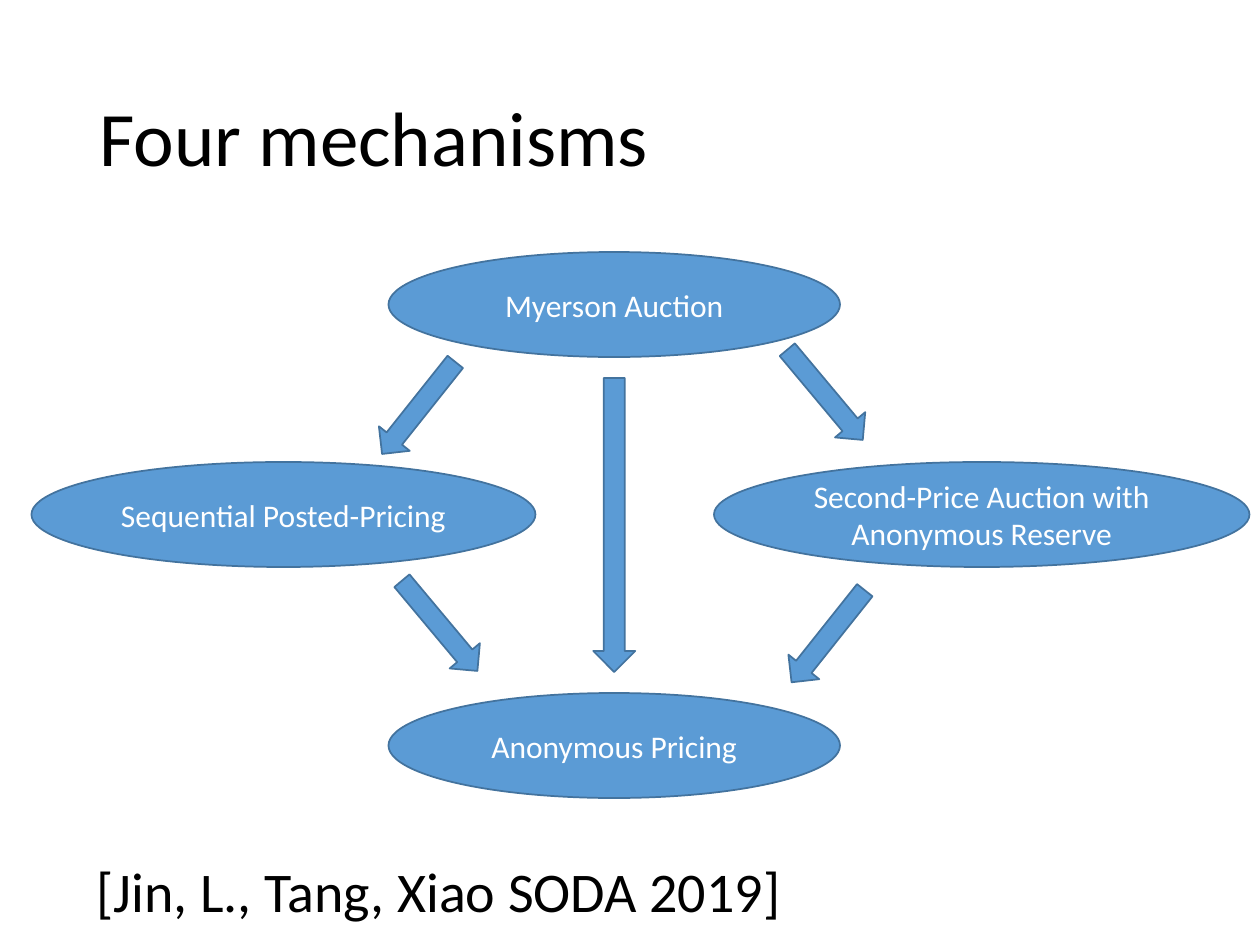
"""Build a slide relating four auction mechanisms by arrows."""
from typing import NamedTuple

from pptx import Presentation
from pptx import util as u
from pptx.dml.color import RGBColor
from pptx.enum import shapes, text

FONT = "Calibri"
BLACK, WHITE, BLUE, OUTLINE = "000000", "FFFFFF", "5B9BD5", "43739E"
WIDTH, HEIGHT = u.Inches(10), u.Inches(7.5)
COLUMNS, ROWS = 120, 90
OVAL_ROWS = 10
SLANT_WIDTH, SLANT_LENGTH = 3.75, 11.2


class Mechanism(NamedTuple):
    label: str
    column: float
    row: float
    columns: float


class Arrow(NamedTuple):
    column: float
    row: float
    rotation: float = 0
    columns: float = SLANT_WIDTH
    rows: float = SLANT_LENGTH


MECHANISMS = [
    Mechanism("Myerson Auction", 37, 24, 43),
    Mechanism("Anonymous Pricing", 37, 66, 43),
    Mechanism("Sequential Posted-Pricing", 3, 44, 48),
    Mechanism("Second-Price Auction with Anonymous Reserve", 68, 44, 51),
]
DOWN_LEFT, DOWN_RIGHT = 38.5, 320.1
ARROWS = [
    Arrow(56.5, 36, columns=4, rows=28),
    Arrow(38, 33.25, DOWN_LEFT),
    Arrow(77, 55, DOWN_LEFT),
    Arrow(40, 54, DOWN_RIGHT),
    Arrow(76.7, 32, DOWN_RIGHT),
]


def colour(value: str) -> RGBColor:
    return RGBColor.from_string(value)


def grid_box(column: float, row: float, columns: float, rows: float) -> list[int]:
    return [
        round(WIDTH * column / COLUMNS),
        round(HEIGHT * row / ROWS),
        round(WIDTH * columns / COLUMNS),
        round(HEIGHT * rows / ROWS),
    ]


def write(shape, words: str, size: float, ink: str, alignment, anchor):
    frame = shape.text_frame
    frame.word_wrap = True
    frame.vertical_anchor = anchor
    paragraph = frame.paragraphs[0]
    paragraph.alignment = alignment
    run = paragraph.add_run()
    run.text = words
    run.font.name = FONT
    run.font.size = u.Pt(size)
    run.font.color.rgb = colour(ink)
    return paragraph


def add_figure(slide, kind, box: list[int]):
    shape = slide.shapes.add_shape(kind, *box)
    shape.shadow.inherit = False
    shape.fill.solid()
    shape.fill.fore_color.rgb = colour(BLUE)
    shape.line.color.rgb = colour(OUTLINE)
    shape.line.width = u.Pt(1)
    return shape


def add_mechanism(slide, mechanism: Mechanism) -> None:
    box = grid_box(mechanism.column, mechanism.row, mechanism.columns, OVAL_ROWS)
    oval = add_figure(slide, shapes.MSO_SHAPE.OVAL, box)
    write(oval, mechanism.label, 18, WHITE, text.PP_ALIGN.CENTER, text.MSO_ANCHOR.MIDDLE)


def add_arrow(slide, arrow: Arrow) -> None:
    box = grid_box(arrow.column, arrow.row, arrow.columns, arrow.rows)
    shape = add_figure(slide, shapes.MSO_SHAPE.DOWN_ARROW, box)
    shape.rotation = arrow.rotation


def add_title(slide, words: str) -> None:
    title = slide.shapes.title
    title.left, title.top, title.width, title.height = grid_box(8.25, 4.8, 103.5, 17.4)
    paragraph = write(title, words, 44, BLACK, text.PP_ALIGN.LEFT, text.MSO_ANCHOR.MIDDLE)
    paragraph.line_spacing = 0.9


def add_citation(slide, words: str) -> None:
    citation = slide.shapes.add_textbox(*grid_box(8, 81, 75.5, 7.7))
    write(citation, words, 32, BLACK, text.PP_ALIGN.LEFT, text.MSO_ANCHOR.TOP)


def main() -> None:
    presentation = Presentation()
    presentation.slide_width, presentation.slide_height = WIDTH, HEIGHT
    slide = presentation.slides.add_slide(presentation.slide_layouts.get_by_name("Title Only"))
    add_title(slide, "Four mechanisms")
    for mechanism in MECHANISMS:
        add_mechanism(slide, mechanism)
    for arrow in ARROWS:
        add_arrow(slide, arrow)
    add_citation(slide, "[Jin, L., Tang, Xiao SODA 2019]")
    presentation.save("out.pptx")


if __name__ == "__main__":
    main()
